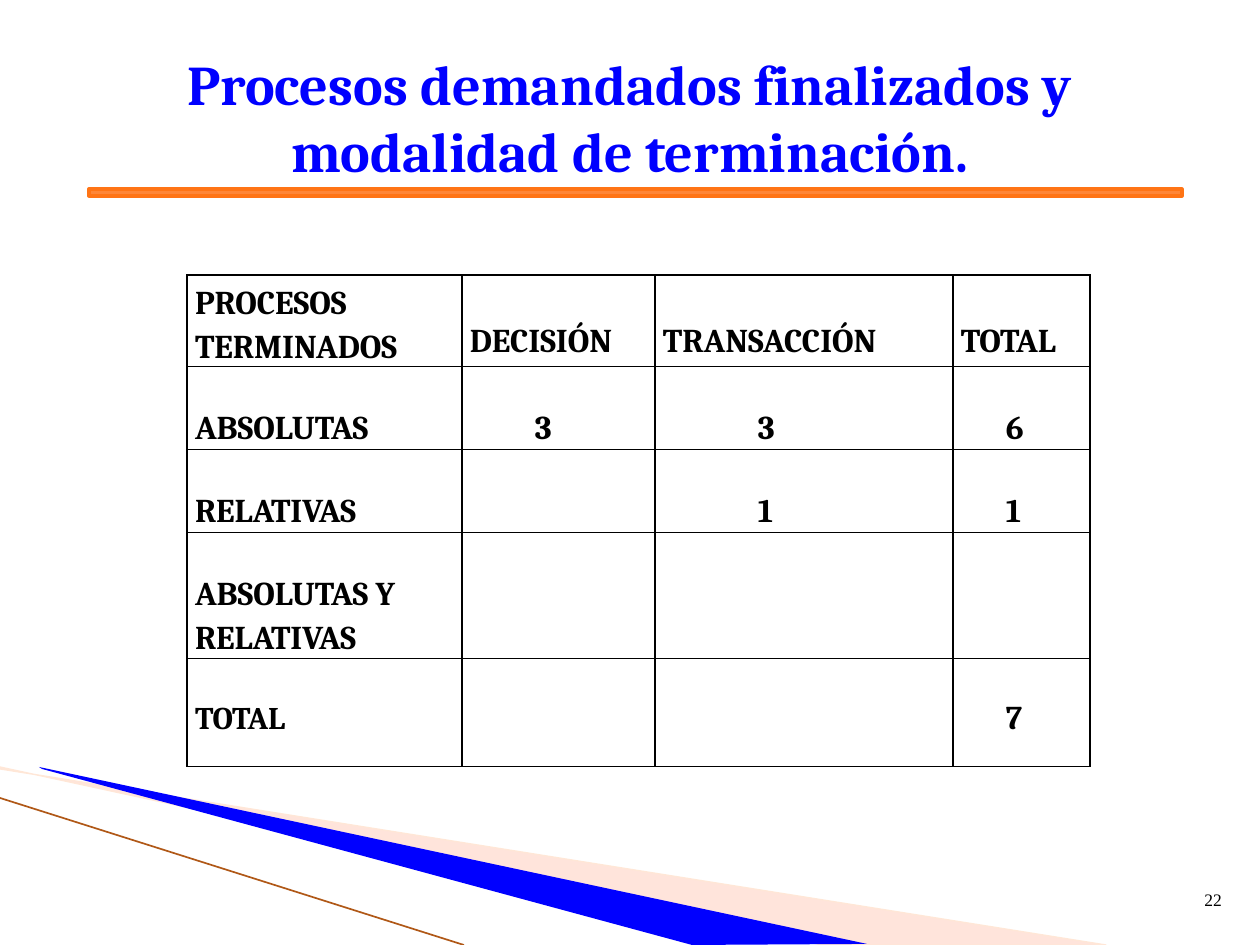
"""Build the slide on finished lawsuits and how they ended."""
from dataclasses import dataclass

from lxml import etree
from pptx import Presentation, util as u
from pptx.dml.color import RGBColor
from pptx.enum import shapes, text
from pptx.oxml import ns

PX = 914400 / 126


@dataclass(frozen=True)
class Theme:
    blue: str = "0000FF"
    black: str = "000000"
    peach: str = "FFBCA5"
    pale: str = "FFE7D7"
    brown: str = "B05817"
    orange: str = "FE8637"
    rim: str = "FF7415"
    serif: str = "Cambria"
    roman: str = "Times New Roman"
    head: int = 32
    cell: int = 19
    total: int = 18
    page: int = 10


def px(num):
    return u.Emu(round(num * PX))


def rgb(hue):
    return RGBColor.from_string(hue)


def apply(item, form):
    for key, value in form.items():
        setattr(item, key, value)


class Deck:
    def __init__(self, theme):
        self.theme = theme
        self.show = Presentation()
        apply(self.show, {"slide_width": px(1260), "slide_height": px(945)})
        self.slide = self.show.slides.add_slide(self.show.slide_layouts[5])
        self.items = self.slide.shapes

    def words(self, frame, copy, size, hue, face, bold=False, form=None):
        para = frame.paragraphs[0]
        apply(para, form or {})
        run = para.add_run()
        run.text = copy
        apply(run.font, {"size": u.Pt(size), "name": face, "bold": bold})
        run.font.color.rgb = rgb(hue)

    def paint(self, shape, fill, line=None, width=0, alpha=None):
        shape.shadow.inherit = False
        shape.fill.solid()
        shape.fill.fore_color.rgb = rgb(fill)
        if alpha:
            hue = shape._element.spPr.find(ns.qn("a:solidFill"))[0]
            etree.SubElement(hue, ns.qn("a:alpha"), val=str(alpha * 1000))
        if line:
            shape.line.color.rgb = rgb(line)
            shape.line.width = u.Pt(width)
        else:
            shape.line.fill.background()

    def blade(self, points, **look):
        pen = self.items.build_freeform(*points[0], scale=PX)
        pen.add_line_segments(points[1:], close=True)
        self.paint(pen.convert_to_shape(), **look)

    def rule(self, start, end, hue, width):
        line = self.items.add_connector(
            shapes.MSO_CONNECTOR.STRAIGHT, *map(px, start + end))
        line.line.color.rgb = rgb(hue)
        line.line.width = u.Pt(width)
        etree.SubElement(line._element.spPr, ns.qn("a:effectLst"))

    def bar(self, box, **look):
        kind = shapes.MSO_SHAPE.MATH_MINUS
        self.paint(self.items.add_shape(kind, *map(px, box)), **look)

    def title(self, box, copy):
        head = self.items.title
        apply(head, dict(zip(("left", "top", "width", "height"), map(px, box))))
        apply(head.text_frame, {"word_wrap": True,
                                "vertical_anchor": text.MSO_ANCHOR.MIDDLE})
        self.words(head.text_frame, copy, self.theme.head, self.theme.blue,
                   self.theme.serif, True, {"alignment": text.PP_ALIGN.CENTER})

    def label(self, box, copy):
        frame = self.items.add_textbox(*map(px, box)).text_frame
        frame.word_wrap = True
        self.words(frame, copy, self.theme.page, self.theme.black, self.theme.roman)

    def edge(self, cell):
        props = cell._tc.get_or_add_tcPr()
        for side in "LRTB":
            line = etree.SubElement(props, ns.qn("a:ln" + side), w="12700")
            fill = etree.SubElement(line, ns.qn("a:solidFill"))
            etree.SubElement(fill, ns.qn("a:srgbClr"), val=self.theme.black)

    def table(self, spot, cols, rows, data, pads, drops):
        size = sum(cols), sum(rows)
        grid = self.items.add_table(len(rows), len(cols), *map(px, spot + size)).table
        apply(grid, {"first_row": False, "horz_banding": False})
        for col, wide in zip(grid.columns, cols):
            col.width = px(wide)
        for row, high in zip(grid.rows, rows):
            row.height = px(high)
        for y, line in enumerate(data):
            for x, copy in enumerate(line):
                cell = grid.cell(y, x)
                self.edge(cell)
                cell.fill.background()
                apply(cell, {
                    "margin_left": px(pads[x] if copy.isdigit() else 8),
                    "margin_right": px(8), "margin_top": 0,
                    "margin_bottom": px(0 if y == x == 0 else drops[y]),
                    "vertical_anchor": text.MSO_ANCHOR.BOTTOM})
                if copy:
                    last = copy == "TOTAL" and x == 0
                    self.words(cell.text_frame, copy,
                               self.theme.total if last else self.theme.cell,
                               self.theme.black, self.theme.serif, True,
                               {"line_spacing": 1.15})


def main():
    theme = Theme()
    deck = Deck(theme)
    deck.blade([(0, 769), (1106, 945), (822, 945), (0, 767)],
               fill=theme.peach, line=theme.pale, width=0.75, alpha=40)
    deck.blade([(39, 767), (867, 944), (692, 945), (42, 769)], fill=theme.blue)
    deck.rule((0, 798), (464, 945), theme.brown, 0.95)
    deck.bar((-108, 178, 1487, 29), fill=theme.orange, line=theme.rim, width=2)
    deck.title((63, 38, 1134, 158),
               "Procesos demandados finalizados y modalidad de terminación.")
    deck.label((1192, 883, 50, 50), "22")
    deck.table((187, 275), (275, 193, 298, 137), (88, 83, 83, 126, 108), [
        ("PROCESOS TERMINADOS", "DECISIÓN", "TRANSACCIÓN", "TOTAL"),
        ("ABSOLUTAS", "3", "3", "6"),
        ("RELATIVAS", "", "1", "1"),
        ("ABSOLUTAS Y RELATIVAS", "", "", ""),
        ("TOTAL", "", "", "7"),
    ], pads=(8, 73, 103, 53), drops=(6, 2, 2, 1, 29))
    deck.show.save("out.pptx")


if __name__ == "__main__":
    main()
